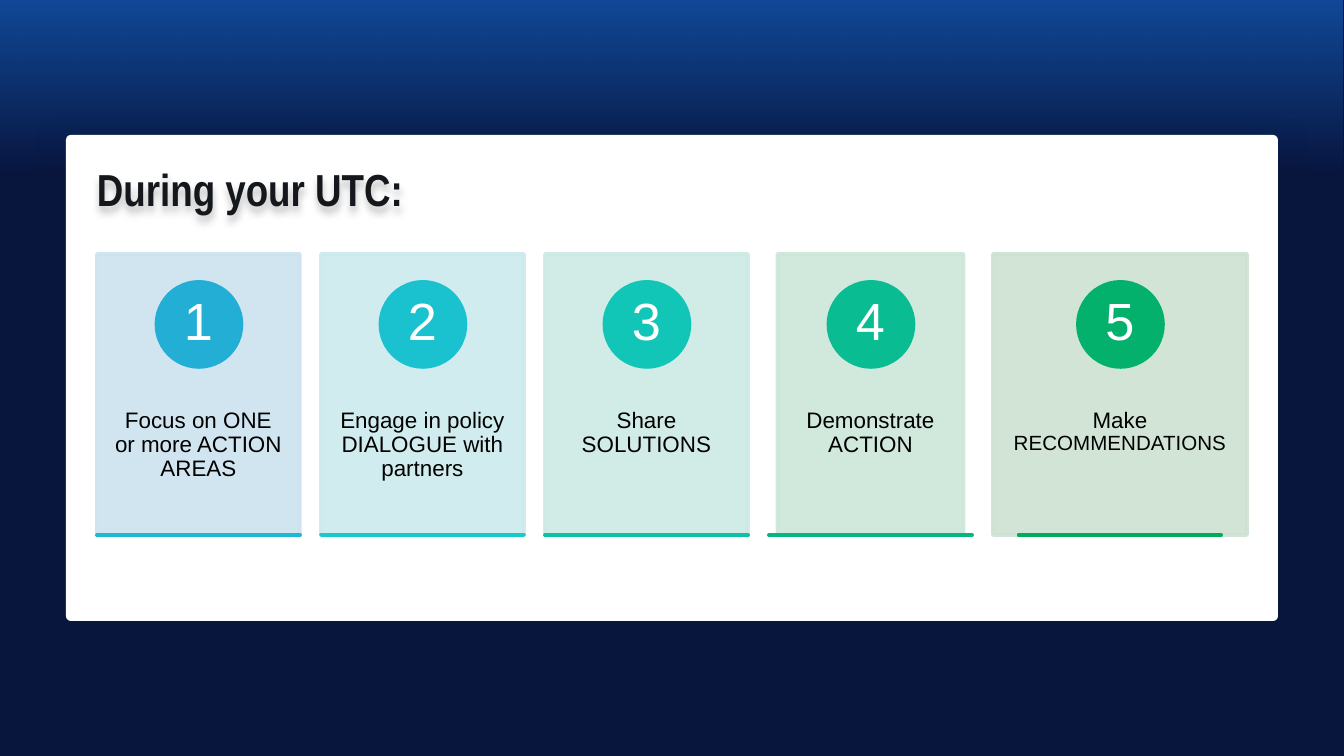
from dataclasses import dataclass

from lxml.etree import SubElement
from pptx import Presentation
from pptx.dml.color import RGBColor
from pptx.enum.shapes import MSO_SHAPE as Preset
from pptx.enum.text import MSO_ANCHOR as Anchor, MSO_AUTO_SIZE as AutoSize, PP_ALIGN as Align
from pptx.oxml.ns import qn
from pptx.util import Pt

EMU_PER_PX = 914400 / 134.4


@dataclass(frozen=True)
class Theme:
    navy: str = "08153D"
    glow: str = "1A80F9"
    white: str = "FFFFFF"
    ink: str = "14181C"
    black: str = "000000"
    body_font: str = "Arial"
    title_font: str = "Arial Narrow"
    title_size: int = 24
    number_size: int = 28
    label_size: int = 12
    small_size: int = 11
    outline: int = 2


THEME = Theme()
STEP_WIDTH, STEP_GAP = 203, 21
STEPS = [
    (203, "CDE3F0", "23AED6", "1EB8D2", [("Focus on ONE or more ACTION AREAS", THEME.label_size)]),
    (203, "CCEAED", "19C2CE", "15CAC9", [("Engage in policy DIALOGUE with partners", THEME.label_size)]),
    (203, "CCE9E4", "11C6B6", "0DC1A4", [("Share SOLUTIONS", THEME.label_size)]),
    (186, "CCE6DA", "09BC91", "06B67F", [("Demonstrate ACTION", THEME.label_size)]),
    (254, "CCE2D2", "03B16D", "00AB5B",
     [("Make ", THEME.label_size), ("RECOMMENDATIONS", THEME.small_size)]),
]


def px(*lengths):
    return [round(length * EMU_PER_PX) for length in lengths]


def rgb(color):
    return RGBColor.from_string(color)


def set_alpha(color_element, percent):
    SubElement(color_element, qn("a:alpha"), val=str(percent * 1000))


def add_shadow(shape, color, alpha, blur, distance):
    properties = shape.element.spPr
    for effects in properties.findall(qn("a:effectLst")):
        properties.remove(effects)
    effects = SubElement(properties, qn("a:effectLst"))
    shadow = SubElement(effects, qn("a:outerShdw"), blurRad=str(Pt(blur)), dist=str(Pt(distance)),
                        dir="5400000", algn="t", rotWithShape="0")
    set_alpha(SubElement(shadow, qn("a:srgbClr"), val=color), alpha)


def draw(slide, preset, box, color, outline=True, alpha=100):
    shape = slide.shapes.add_shape(preset, *px(*box))
    shape.shadow.inherit = False
    shape.fill.solid()
    shape.fill.fore_color.rgb = rgb(color)
    if outline:
        shape.line.color.rgb = rgb(color)
        shape.line.width = Pt(THEME.outline)
    else:
        shape.line.fill.background()
    if alpha < 100:
        for color_element in list(shape.element.spPr.iter(qn("a:srgbClr"))):
            set_alpha(color_element, alpha)
    return shape


def write(holder, runs, *, font, color, bold=False, align=Align.CENTER, anchor=Anchor.TOP, insets=(0, 0)):
    frame = holder.text_frame
    frame.word_wrap = True
    frame.auto_size = AutoSize.NONE
    frame.vertical_anchor = anchor
    side, end = px(*insets)
    frame.margin_left = frame.margin_right = side
    frame.margin_top = frame.margin_bottom = end
    paragraph = frame.paragraphs[0]
    paragraph.alignment = align
    paragraph.line_spacing = 0.9
    paragraph.space_before = Pt(0)
    for text, size in runs:
        run = paragraph.add_run()
        run.text = text
        run.font.name = font
        run.font.size = Pt(size)
        run.font.bold = bold
        run.font.color.rgb = rgb(color)


def build_backdrop(slide, width, height):
    slide.background.fill.solid()
    slide.background.fill.fore_color.rgb = rgb(THEME.navy)
    glow = draw(slide, Preset.RECTANGLE, (-1, -1, width, 177), THEME.glow, outline=False)
    glow.fill.gradient()
    glow.fill.gradient_angle = 270
    for stop, position, alpha in zip(glow.fill.gradient_stops, (0, 1), (49, 0)):
        stop.position = position
        stop.color.rgb = rgb(THEME.glow)
    for color_element, alpha in zip(list(glow.element.spPr.iter(qn("a:srgbClr"))), (49, 0)):
        set_alpha(color_element, alpha)
    panel = draw(slide, Preset.ROUNDED_RECTANGLE, (66, 135, width - 132, 486), THEME.white, outline=False)
    panel.adjustments[0] = 0.01
    add_shadow(panel, THEME.navy, 50, 17, 6)


def build_title(slide, box):
    title = slide.shapes.title
    title.left, title.top, title.width, title.height = px(*box)
    write(title, [("During your UTC:", THEME.title_size)], font=THEME.title_font, color=THEME.ink,
          bold=True, align=Align.LEFT, anchor=Anchor.MIDDLE)
    add_shadow(title, THEME.black, 25, 4, 3)
    title.element.getparent().append(title.element)


def build_step(slide, box, number, card_width, tint, badge, accent, label_runs):
    left, top, width, height = box
    center = left + width / 2
    card_left = center - card_width / 2
    draw(slide, Preset.RECTANGLE, (card_left, top, card_width, height), tint, alpha=90)
    label = slide.shapes.add_textbox(*px(card_left, top + 107, card_width, 169))
    write(label, label_runs, font=THEME.body_font, color=THEME.black, insets=(16, 48))
    draw(slide, Preset.OVAL, (center - 42, top + 28, 85, 85), badge)
    digit = slide.shapes.add_textbox(*px(center - 30, top + 40, 60, 60))
    write(digit, [(str(number), THEME.number_size)], font=THEME.body_font, color=THEME.white,
          anchor=Anchor.MIDDLE, insets=(7, 1))
    draw(slide, Preset.RECTANGLE, (center - STEP_WIDTH / 2, top + height, STEP_WIDTH, 0), accent)


def build_steps(slide, left, top, height):
    for number, (card_width, *details) in enumerate(STEPS, 1):
        slot = max(card_width, STEP_WIDTH)
        build_step(slide, (left, top, slot, height), number, card_width, *details)
        left += slot + STEP_GAP


def main():
    width, height = 1344, 756
    deck = Presentation()
    deck.slide_width, deck.slide_height = px(width, height)
    slide = deck.slides.add_slide(deck.slide_layouts[5])
    build_backdrop(slide, width, height)
    build_steps(slide, 97, 254, 281)
    build_title(slide, (97, 163, 945, 58))
    deck.save("out.pptx")


if __name__ == "__main__":
    main()
